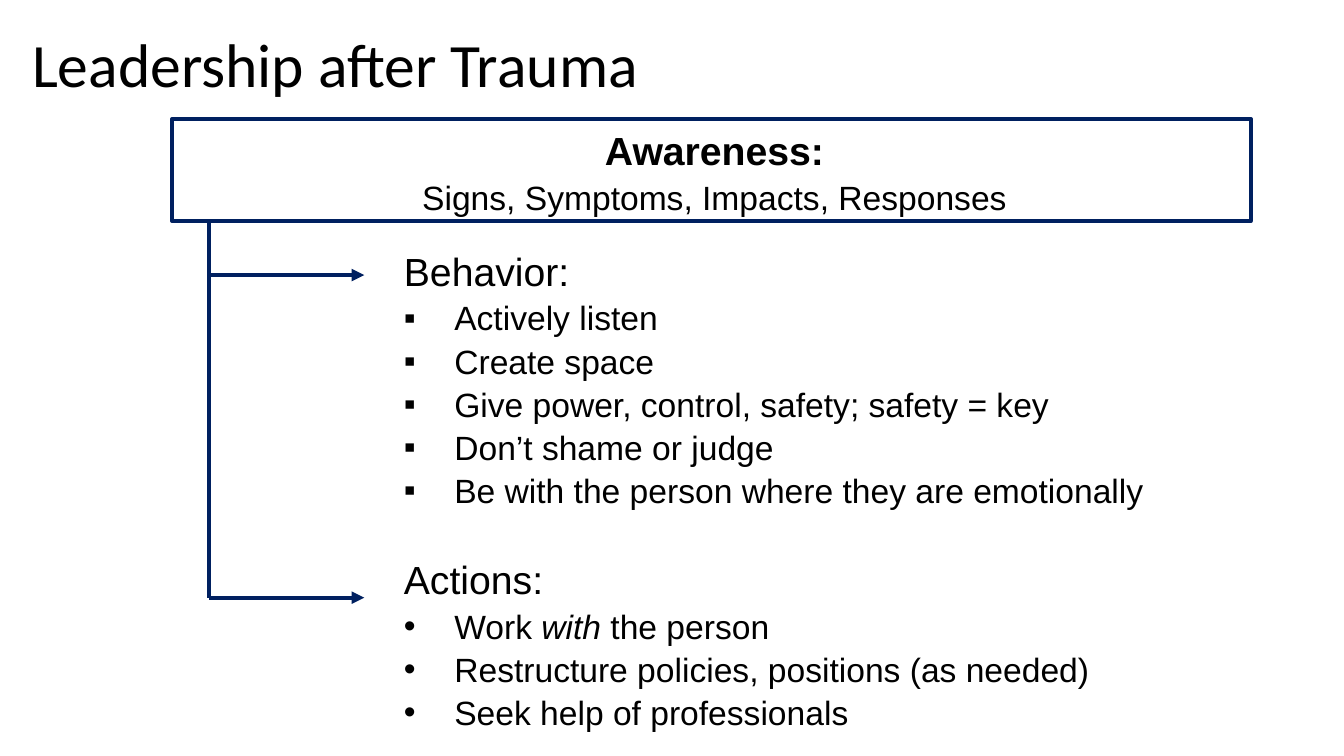
import dataclasses

import lxml.etree
import pptx
import pptx.dml.color
import pptx.enum.shapes
import pptx.enum.text
import pptx.oxml.ns
import pptx.util

Cm = pptx.util.Cm
Pt = pptx.util.Pt
ALIGN = pptx.enum.text.PP_ALIGN


@dataclasses.dataclass(frozen=True)
class Theme:
    ink: str = "000000"
    paper: str = "FFFFFF"
    navy: str = "002060"
    title_font: str = "Calibri"
    body_font: str = "Arial"
    title_size: int = 44
    heading_size: int = 28
    body_size: int = 24
    line_width: int = 3
    indent: float = 0.15
    bullet_hang: float = 1.27


def rgb(value):
    return pptx.dml.color.RGBColor.from_string(value)


def add_xml(parent, tag, **attributes):
    return lxml.etree.SubElement(parent, pptx.oxml.ns.qn(tag), attributes)


def write(frame, text, *, size, font, color, bold=False, align=ALIGN.LEFT,
          spacing=1.07, before=0, indent=0, hang=0, bullet=None):
    """Append a paragraph; parts of the text between asterisks are italic."""
    paragraph = frame.paragraphs[0]
    if paragraph.runs:
        paragraph = frame.add_paragraph()
    paragraph.alignment = align
    paragraph.line_spacing = spacing
    paragraph.space_before, paragraph.space_after = Pt(before), Pt(0)
    properties = paragraph._p.get_or_add_pPr()
    properties.set("marL", str(Cm(indent + hang)))
    properties.set("indent", str(-Cm(hang)))
    if bullet:
        add_xml(properties, "a:buFont", typeface=font)
        add_xml(properties, "a:buChar", char=bullet)
    for position, part in enumerate(text.split("*")):
        run = paragraph.add_run()
        run.text = part
        run.font.size, run.font.name = Pt(size), font
        run.font.color.rgb = rgb(color)
        run.font.bold, run.font.italic = bold, position % 2 == 1


class SlideBuilder:
    def __init__(self, slide, theme):
        self.slide = slide
        self.theme = theme

    def prepare(self, frame):
        frame.word_wrap = True
        frame.vertical_anchor = pptx.enum.text.MSO_ANCHOR.MIDDLE
        return frame

    def box(self, left, top, width, height, fill=None, line=None):
        shape = self.slide.shapes.add_shape(
            pptx.enum.shapes.MSO_SHAPE.RECTANGLE,
            Cm(left), Cm(top), Cm(width), Cm(height))
        shape.shadow.inherit = False
        if fill:
            shape.fill.solid()
            shape.fill.fore_color.rgb = rgb(fill)
        else:
            shape.fill.background()
        if line:
            shape.line.color.rgb = rgb(line)
            shape.line.width = Pt(self.theme.line_width)
        else:
            shape.line.fill.background()
        return self.prepare(shape.text_frame)

    def text_area(self, left, top, width, height):
        area = self.slide.shapes.add_textbox(
            Cm(left), Cm(top), Cm(width), Cm(height))
        return self.prepare(area.text_frame)

    def title(self, text, left, top, width, height):
        theme = self.theme
        frame = self.box(left, top, width, height, fill=theme.paper)
        write(frame, text, size=theme.title_size, font=theme.title_font,
              color=theme.ink, spacing=0.9)

    def heading(self, frame, text, **style):
        theme = self.theme
        write(frame, text, size=theme.heading_size, font=theme.body_font,
              color=theme.ink, indent=theme.indent, **style)

    def body(self, frame, text, **style):
        theme = self.theme
        write(frame, text, size=theme.body_size, font=theme.body_font,
              color=theme.ink, indent=theme.indent, **style)

    def section(self, frame, heading, points, bullet, before=0):
        self.heading(frame, heading, before=before)
        for point in points:
            self.body(frame, point, bullet=bullet, hang=self.theme.bullet_hang)

    def connector(self, x1, y1, x2, y2, arrow=False):
        link = self.slide.shapes.add_connector(
            pptx.enum.shapes.MSO_CONNECTOR.STRAIGHT,
            Cm(x1), Cm(y1), Cm(x2), Cm(y2))
        link.line.color.rgb = rgb(self.theme.navy)
        link.line.width = Pt(self.theme.line_width)
        if arrow:
            add_xml(link.line._get_or_add_ln(), "a:tailEnd", type="triangle")
        add_xml(link._element.spPr, "a:effectLst")


def main():
    presentation = pptx.Presentation()
    presentation.slide_width, presentation.slide_height = Cm(33.87), Cm(19.05)
    slide = presentation.slides.add_slide(presentation.slide_layouts[6])
    theme = Theme()
    builder = SlideBuilder(slide, theme)

    responses = builder.text_area(9.78, 5.99, 24.09, 12.62)
    builder.section(responses, "Behavior:", [
        "Actively listen",
        "Create space",
        "Give power, control, safety; safety = key",
        "Don’t shame or judge",
        "Be with the person where they are emotionally",
    ], bullet="▪")
    builder.section(responses, "Actions:", [
        "Work *with *the person",
        "Restructure policies, positions (as needed)",
        "Seek help of professionals",
    ], bullet="•", before=30)

    builder.title("Leadership after Trauma", 0.56, 0.46, 32.36, 2.51)

    awareness = builder.box(4.34, 3, 27.18, 2.57, line=theme.navy)
    builder.heading(awareness, "Awareness:", bold=True, align=ALIGN.CENTER)
    builder.body(awareness, "Signs, Symptoms, Impacts, Responses",
                 align=ALIGN.CENTER)

    trunk_x, behavior_y, actions_y = 5.27, 6.93, 15.06
    builder.connector(trunk_x, 5.54, trunk_x, actions_y)
    for branch_y in (behavior_y, actions_y):
        builder.connector(trunk_x, branch_y, trunk_x + 3.91, branch_y, arrow=True)

    presentation.save("out.pptx")


if __name__ == "__main__":
    main()
